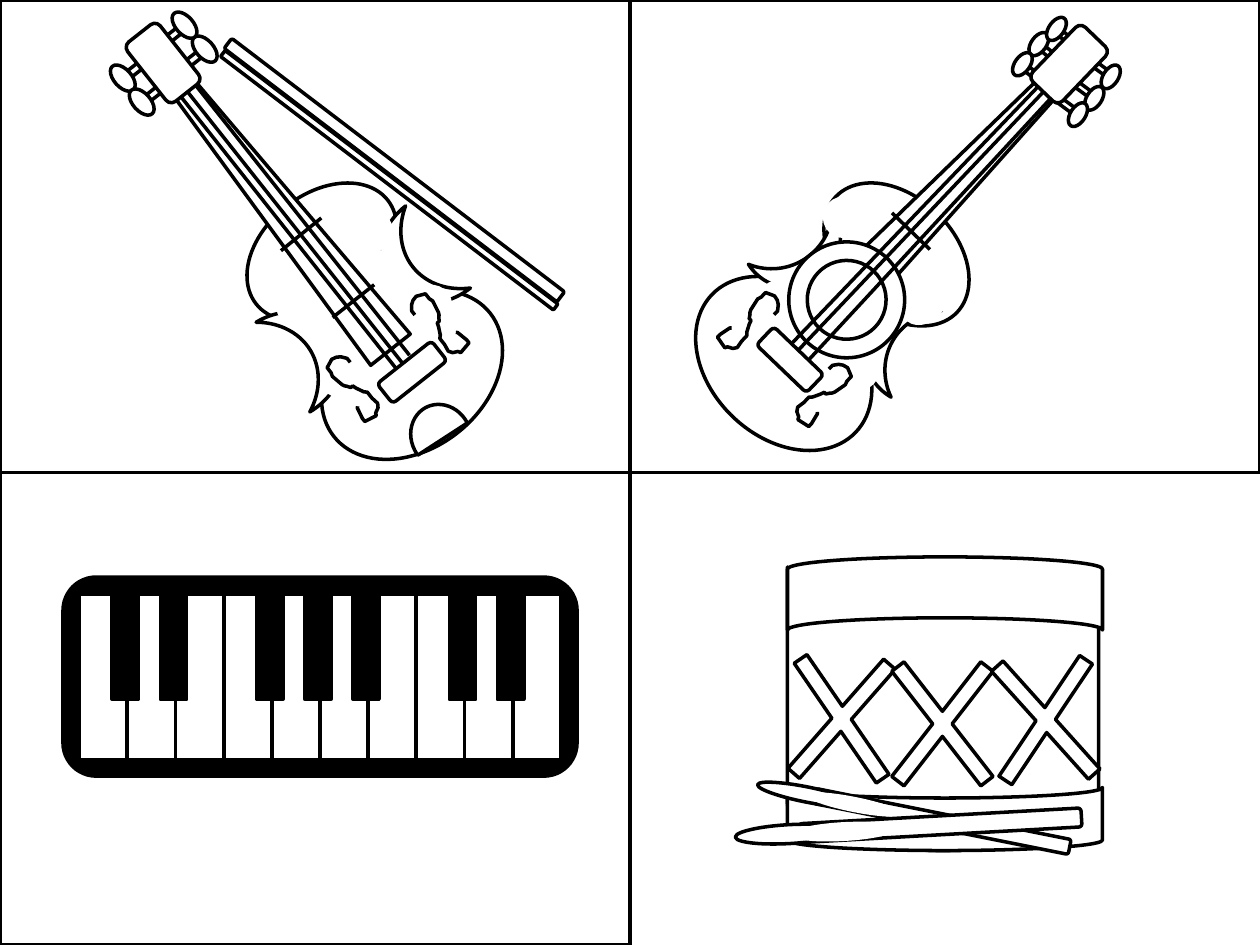
"""Build a four-panel slide of line-drawn musical instruments."""
from typing import NamedTuple, Union

from lxml import etree
from pptx import Presentation
from pptx import util as u
from pptx.dml import color
from pptx.enum import shapes
from pptx.oxml import ns

BLACK, WHITE = "000000", "FFFFFF"
KIND = shapes.MSO_SHAPE
VIOLIN_TILT, GUITAR_TILT = 321.7, 43.8
STROKE = u.Pt(2)
F_HOLE = [
    (0.11, -0.18), (0.11, -0.22), (0.08, -0.26), (0.05, -0.28), (0.01, -0.29),
    (-0.06, -0.26), (-0.06, -0.21), (-0.07, -0.18), (-0.05, -0.08), (-0.04, -0.06),
    (-0.03, -0.05), (-0.01, -0.02), (0.01, -0.02), (0.02, 0.01), (0.05, 0.07),
    (0.07, 0.09), (0.07, 0.15), (0.08, 0.21), (0.06, 0.24), (0.02, 0.26),
    (0.01, 0.28), (-0.09, 0.26), (-0.09, 0.23), (-0.07, 0.14), (-0.06, 0.13),
]


class Part(NamedTuple):
    kind: KIND
    left: float
    top: float
    width: float
    height: float
    rotation: float = 0
    adjustments: tuple = ()
    fill: Union[str, None] = WHITE
    outlined: bool = True


class Line(NamedTuple):
    start: tuple
    end: tuple


class SoundHole(NamedTuple):
    center_x: float
    center_y: float
    rotation: float
    mirror: int


def length(inches: float) -> u.Length:
    return u.Cm(inches * 2.54)


def rgb(value: str) -> color.RGBColor:
    return color.RGBColor.from_string(value)


def style(shape, fill: Union[str, None], outlined: bool, rotation: float) -> None:
    shape.shadow.inherit = False
    shape.rotation = rotation
    if fill:
        shape.fill.solid()
        shape.fill.fore_color.rgb = rgb(fill)
    else:
        shape.fill.background()
    if outlined:
        shape.line.color.rgb = rgb(BLACK)
        shape.line.width = STROKE
    else:
        shape.line.fill.background()


def draw_part(target, part: Part) -> None:
    box = [length(value) for value in part[1:5]]
    shape = target.add_shape(part.kind, *box)
    for index, value in enumerate(part.adjustments):
        shape.adjustments[index] = value
    style(shape, part.fill, part.outlined, part.rotation)


def draw_line(target, line: Line) -> None:
    ends = [length(value) for value in line.start + line.end]
    connector = target.add_connector(shapes.MSO_CONNECTOR.STRAIGHT, *ends)
    connector.line.color.rgb = rgb(BLACK)
    connector.line.width = STROKE
    etree.SubElement(connector._element.spPr, ns.qn("a:effectLst"))


def draw_sound_hole(target, hole: SoundHole) -> None:
    points = [(length(hole.center_x + hole.mirror * x), length(hole.center_y + y))
              for x, y in F_HOLE]
    builder = target.build_freeform(*points[0])
    builder.add_line_segments(points[1:], close=False)
    style(builder.convert_to_shape(), WHITE, True, hole.rotation)


DRAWERS = {Part: draw_part, Line: draw_line, SoundHole: draw_sound_hole}


def draw_all(target, items: list) -> None:
    for item in items:
        DRAWERS[type(item)](target, item)


def mask(left: float, top: float, width: float, height: float, rotation: float) -> Part:
    return Part(KIND.OVAL, left, top, width, height, rotation, outlined=False)


def pegs(stems: list, stem: tuple, knob: tuple, offset: tuple, rotation: float) -> list:
    parts = []
    for left, top in stems:
        parts.append(Part(KIND.ROUNDED_RECTANGLE, left, top, *stem, rotation))
        parts.append(Part(KIND.OVAL, left + offset[0], top + offset[1], *knob, rotation - 3.6))
    return parts


def drum() -> list:
    cross, drumhead, stick = KIND.MATH_MULTIPLY, KIND.FLOWCHART_STORED_DATA, KIND.ROUNDED_RECTANGLE
    return [
        Part(drumhead, 6.36, 4.39, 2.25, 2.47, 270),
        Part(cross, 6, 4.83, 1.36, 1.75, 3.4, (0.09,)),
        Part(cross, 6.8, 4.87, 1.36, 1.75, 0, (0.09,)),
        Part(cross, 7.62, 4.84, 1.36, 1.75, 355.9, (0.09,)),
        Part(drumhead, 7.25, 5.25, 0.5, 2.5, 270),
        Part(drumhead, 7.21, 3.46, 0.58, 2.5, 90),
        Part(stick, 7.42, 5.49, 0.12, 2.06, 281.3),
        Part(KIND.OVAL, 6.34, 5.91, 0.12, 0.79, 281.3),
        mask(6.72, 5.99, 0.12, 0.79, 281.3),
        Part(stick, 7.39, 5.43, 0.15, 2.24, 266.8),
        Part(KIND.OVAL, 6.19, 6.19, 0.15, 0.86, 266.8),
        mask(6.62, 6.17, 0.15, 0.86, 266.8),
    ]


def violin() -> list:
    tilt, bar = VIOLIN_TILT, KIND.ROUNDED_RECTANGLE
    stem, knob = (0.06, 0.24), (0.25, 0.14)
    return [
        Part(KIND.OVAL, 1.89, 1.54, 1.33, 0.92, tilt),
        Part(KIND.OVAL, 2.48, 2.39, 1.58, 1.17, tilt),
        Part(KIND.MOON, 3.03, 1.7, 0.5, 0.83, tilt, (0.49,)),
        Part(KIND.MOON, 2.21, 2.37, 0.5, 0.83, 149.1, (0.49,)),
        mask(2.37, 1.88, 0.92, 1.08, tilt),
        Part(KIND.TRAPEZOID, 2.05, 0.33, 0.4, 2.74, tilt),
        *[Line((x, y), (x + 1.71, y + 2.16)) for x, y in [(1.49, 0.73), (1.54, 0.66), (1.43, 0.76)]],
        Part(bar, 3.17, 2.68, 0.2, 0.55, 51.7),
        *pegs([(1.48, 0.37), (1.32, 0.18)], stem, knob, (0.02, -0.05), 51.7),
        *pegs([(1.07, 0.41), (1.22, 0.6)], stem, knob, (-0.22, 0.14), 231.7),
        Part(bar, 1.13, 0.2, 0.33, 0.6, tilt),
        Line((2.55, 1.73), (2.23, 1.99)),
        Line((2.97, 2.26), (2.64, 2.52)),
        *[mask(x, y, 0.33, 0.33, tilt)
          for x, y in [(2.79, 1.67), (3.26, 2.26), (2.19, 2.26), (2.54, 2.83)]],
        SoundHole(2.8, 3.08, tilt, 1),
        SoundHole(3.49, 2.58, tilt, -1),
        Part(bar, 3.08, -0.31, 0.1, 3.32, 307.3),
        Part(bar, 3.06, -0.23, 0.06, 3.32, 307.3),
        Part(KIND.CHORD, 3.24, 3.23, 0.52, 0.47, 62.8, (47.05, 162)),
    ]


def guitar() -> list:
    tilt, bar = GUITAR_TILT, KIND.ROUNDED_RECTANGLE
    stem, knob = (0.05, 0.2), (0.21, 0.12)
    return [
        Part(KIND.OVAL, 6.45, 1.56, 1.33, 0.92, tilt),
        Part(KIND.TRAPEZOID, 7.17, 0.31, 0.4, 2.74, tilt),
        Part(KIND.OVAL, 5.43, 2.3, 1.58, 1.17, tilt),
        Part(KIND.MOON, 6.88, 2.31, 0.42, 0.79, 30.3, (0.49,)),
        Part(KIND.MOON, 6.18, 1.66, 0.4, 0.79, 237.7, (0.49,)),
        mask(6.39, 2.04, 0.67, 0.67, tilt),
        Line((7.38, 1.98), (7.08, 1.69)),
        mask(7.17, 2.18, 0.33, 0.42, tilt),
        *[mask(x, y, 0.33, 0.33, tilt) for x, y in [(6.65, 2.77), (6.53, 1.56), (6.02, 2.22)]],
        SoundHole(5.94, 2.56, tilt, 1),
        SoundHole(6.54, 3.13, tilt, -1),
        Part(KIND.DONUT, 6.26, 1.92, 0.92, 0.92, tilt, (0.16,)),
        Line((8.61, 0.3), (6.29, 2.72)),
        Line((8.28, 0.73), (6.25, 2.87)),
        Line((8.46, 0.65), (6.36, 2.92)),
        *pegs([(8.32, 0.34), (8.19, 0.5), (8.46, 0.22)], stem, knob, (-0.18, -0.05), 309.5),
        *pegs([(8.56, 0.6), (8.69, 0.43), (8.43, 0.73)], stem, knob, (0.02, 0.12), 126.4),
        Part(bar, 8.32, 0.21, 0.33, 0.6, tilt),
        Part(bar, 6.17, 2.58, 0.2, 0.55, 133.8),
    ]


def keyboard() -> list:
    pitch = 3.44 / 9
    return [
        Part(KIND.ROUNDED_RECTANGLE, 0.5, 4.58, 4.08, 1.58, fill=BLACK),
        *[Part(KIND.RECTANGLE, 0.63 + pitch * key, 4.72, 0.38, 1.31) for key in range(10)],
        *[Part(KIND.RECTANGLE, 0.89 + pitch * key, 4.72, 0.21, 0.83, fill=BLACK)
          for key in (0, 1, 3, 4, 5, 7, 8)],
    ]


def main() -> None:
    presentation = Presentation()
    presentation.slide_width, presentation.slide_height = u.Cm(25.4), u.Cm(19.05)
    slide = presentation.slides.add_slide(presentation.slide_layouts[6])
    for instrument in (drum, violin, guitar, keyboard):
        draw_all(slide.shapes.add_group_shape().shapes, instrument())
    panels = [Part(KIND.RECTANGLE, left, top, 5, 3.75, fill=None)
              for left, top in [(0, 0), (5, 0), (0, 3.75)]]
    draw_all(slide.shapes, panels)
    presentation.save("out.pptx")


if __name__ == "__main__":
    main()
